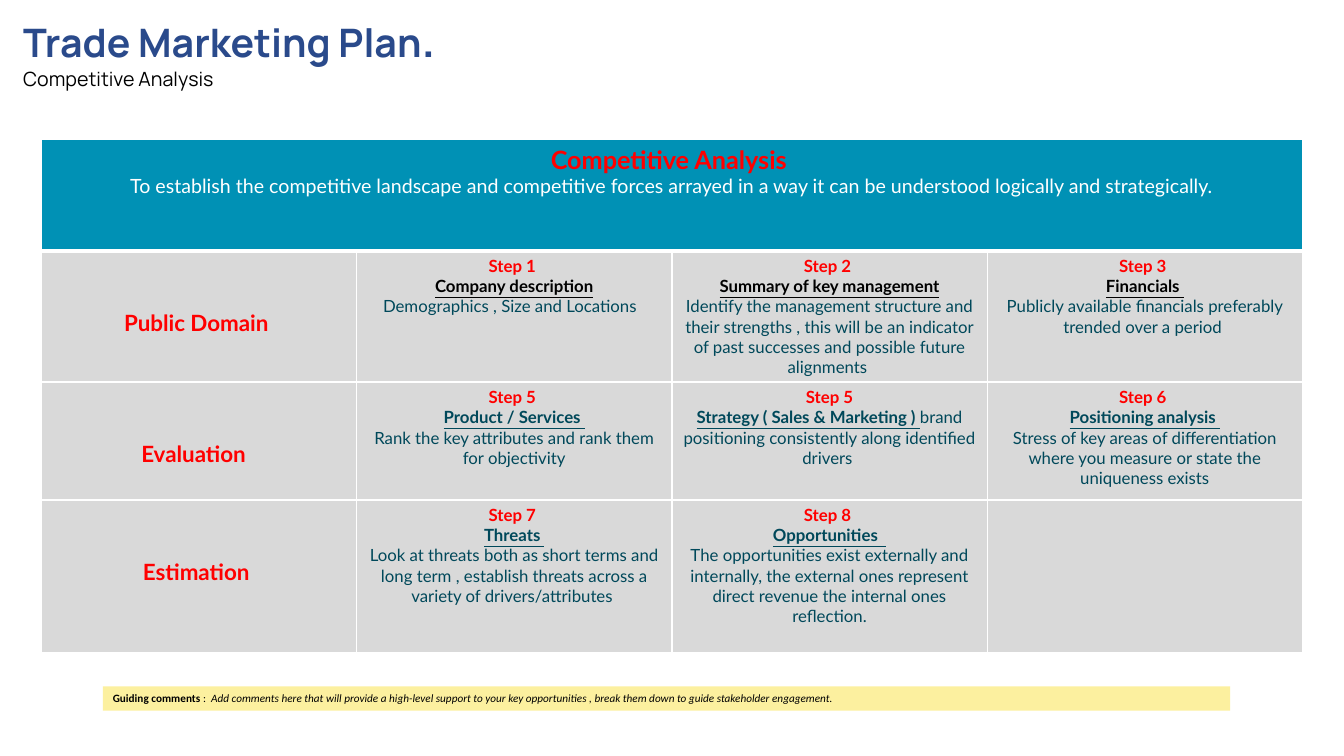
import pptx
import pptx.util
import pptx.dml.color
import pptx.enum.shapes
import pptx.enum.text
import pptx.oxml
import pptx.oxml.ns

Inches = pptx.util.Inches
RGBColor = pptx.dml.color.RGBColor
Align = pptx.enum.text.PP_ALIGN
Anchor = pptx.enum.text.MSO_ANCHOR

WHITE = RGBColor(255, 255, 255)
BLACK = RGBColor(0, 0, 0)
RED = RGBColor(255, 0, 0)
BLUE = RGBColor(0x2A, 0x4A, 0x8B)
TEAL = RGBColor(0, 0x91, 0xB5)
DEEP = RGBColor(0, 0x48, 0x5A)
GREY = RGBColor(0xD9, 0xD9, 0xD9)
CREAM = RGBColor(0xFC, 0xF0, 0x9F)

HEIGHTS = [1.11, 1.28, 1.17, 1.51]

# Each row: label, heading colour, then (step, heading, body) per cell
STAGES = [
    ("Public Domain ", BLACK, [
        ("Step 1 ", "Company description", "Demographics , Size and Locations  "),
        ("Step 2 ", "Summary of key management",
         "Identify the management structure and their strengths , this will be "
         "an indicator of past successes and possible future alignments "),
        ("Step 3 ", "Financials ",
         "Publicly available financials preferably trended over a period "),
    ]),
    ("Evaluation  ", DEEP, [
        ("Step 5 ", "Product / Services ",
         "Rank the key attributes and rank them for objectivity"),
        ("Step 5", "Strategy ( Sales & Marketing ) ",
         "brand positioning consistently along identified drivers "),
        ("Step 6 ", "Positioning analysis ",
         "Stress of key areas of differentiation where you measure or state "
         "the uniqueness exists"),
    ]),
    ("Estimation ", DEEP, [
        ("Step 7 ", "Threats ",
         "Look at threats both as short terms and long term , establish threats "
         "across a variety of drivers/attributes "),
        ("Step 8 ", "Opportunities  ",
         "The opportunities exist externally and internally, the external ones "
         "represent direct revenue the internal ones reflection."),
    ]),
]


def write(frame, text, first=False, join=False, align=Align.LEFT, font="Lato",
          size=12, color=BLACK, bold=False, under=False, slant=False):
    """Add a run, in a new paragraph unless it is first or joins the last."""
    par = frame.paragraphs[-1] if first or join else frame.add_paragraph()
    par.alignment = align
    run = par.add_run()
    run.text = text
    face = run.font
    face.name, face.size = font, pptx.util.Pt(size)
    face.color.rgb = color
    face.bold, face.underline, face.italic = bold, under, slant


def paint(cell, color, top=1, base=1):
    """Give a cell white borders and a plain fill."""
    props = cell._tc.get_or_add_tcPr()
    for side, width in (("L", 1), ("R", 1), ("T", top), ("B", base)):
        props.append(pptx.oxml.parse_xml(
            f'<a:ln{side} {pptx.oxml.ns.nsdecls("a")} w="{width * 12700}">'
            f'<a:solidFill><a:srgbClr val="{WHITE}"/></a:solidFill></a:ln{side}>'))
    cell.fill.solid()
    cell.fill.fore_color.rgb = color


def add_title(slide, left, top, width, height):
    title = slide.shapes.title
    title.left, title.top = Inches(left), Inches(top)
    title.width, title.height = Inches(width), Inches(height)
    title.fill.solid()
    title.fill.fore_color.rgb = WHITE
    frame = title.text_frame
    frame.auto_size = pptx.enum.text.MSO_AUTO_SIZE.NONE
    frame.vertical_anchor = Anchor.TOP
    look = dict(font="Manrope", color=BLUE, bold=True)
    write(frame, "Trade Marketing Plan", first=True, size=28, **look)
    write(frame, ".", join=True, size=32, **look)
    write(frame, "Competitive Analysis", font="Manrope", size=14)


def add_grid(slide, left, top, width):
    grid = slide.shapes.add_table(
        len(HEIGHTS), 4, Inches(left), Inches(top), Inches(width),
        Inches(sum(HEIGHTS))).table
    for row, height in zip(grid.rows, HEIGHTS):
        row.height = Inches(height)
    for col in grid.columns:
        col.width = Inches(width / 4)
    for at, row in enumerate(grid.rows):
        for cell in row.cells:
            paint(cell, GREY if at else TEAL,
                  top=3 if at == 1 else 1, base=1 if at else 3)

    # Banner across the top
    mid = dict(align=Align.CENTER)
    grid.cell(0, 0).merge(grid.cell(0, 3))
    head = grid.cell(0, 0).text_frame
    write(head, "Competitive Analysis ", first=True, size=18, color=RED,
          bold=True, **mid)
    write(head, "To establish the competitive landscape and competitive forces "
          "arrayed in a way it can be understood logically and strategically.",
          size=14, color=WHITE, **mid)

    # Stage labels and steps
    for at, (label, tint, steps) in enumerate(STAGES, 1):
        cell = grid.cell(at, 0)
        cell.margin_top = Inches(0.58)
        write(cell.text_frame, label, first=True, size=16, color=RED,
              bold=True, **mid)
        for col, (step, name, body) in enumerate(steps, 1):
            frame = grid.cell(at, col).text_frame
            write(frame, step, first=True, color=RED, bold=True, **mid)
            write(frame, name, color=tint, bold=True, under=True, **mid)
            write(frame, body, join=name.startswith("Strategy"), color=DEEP, **mid)


def add_note(slide, left, top, width, height):
    bar = slide.shapes.add_shape(
        pptx.enum.shapes.MSO_SHAPE.RECTANGLE, Inches(left), Inches(top),
        Inches(width), Inches(height))
    bar.shadow.inherit = False
    bar.fill.solid()
    bar.fill.fore_color.rgb = CREAM
    bar.line.fill.background()
    frame = bar.text_frame
    frame.word_wrap = True
    frame.vertical_anchor = Anchor.MIDDLE
    look = dict(font="Calibri", size=8)
    write(frame, "Guiding comments ", first=True, bold=True, **look)
    write(frame, ":  ", join=True, **look)
    write(frame, "Add comments here that will provide a high-level support to your "
          "key opportunities , break them down to guide stakeholder engagement.",
          join=True, slant=True, **look)


def main():
    deck = pptx.Presentation()
    deck.slide_width, deck.slide_height = Inches(13.33), Inches(7.5)
    slide = deck.slides.add_slide(deck.slide_layouts[5])
    add_title(slide, 0.13, 0.08, 11, 0.88)
    add_grid(slide, 0.41, 1.38, 12.51)
    add_note(slide, 1.02, 6.81, 11.18, 0.24)
    deck.save("out.pptx")


if __name__ == "__main__":
    main()
